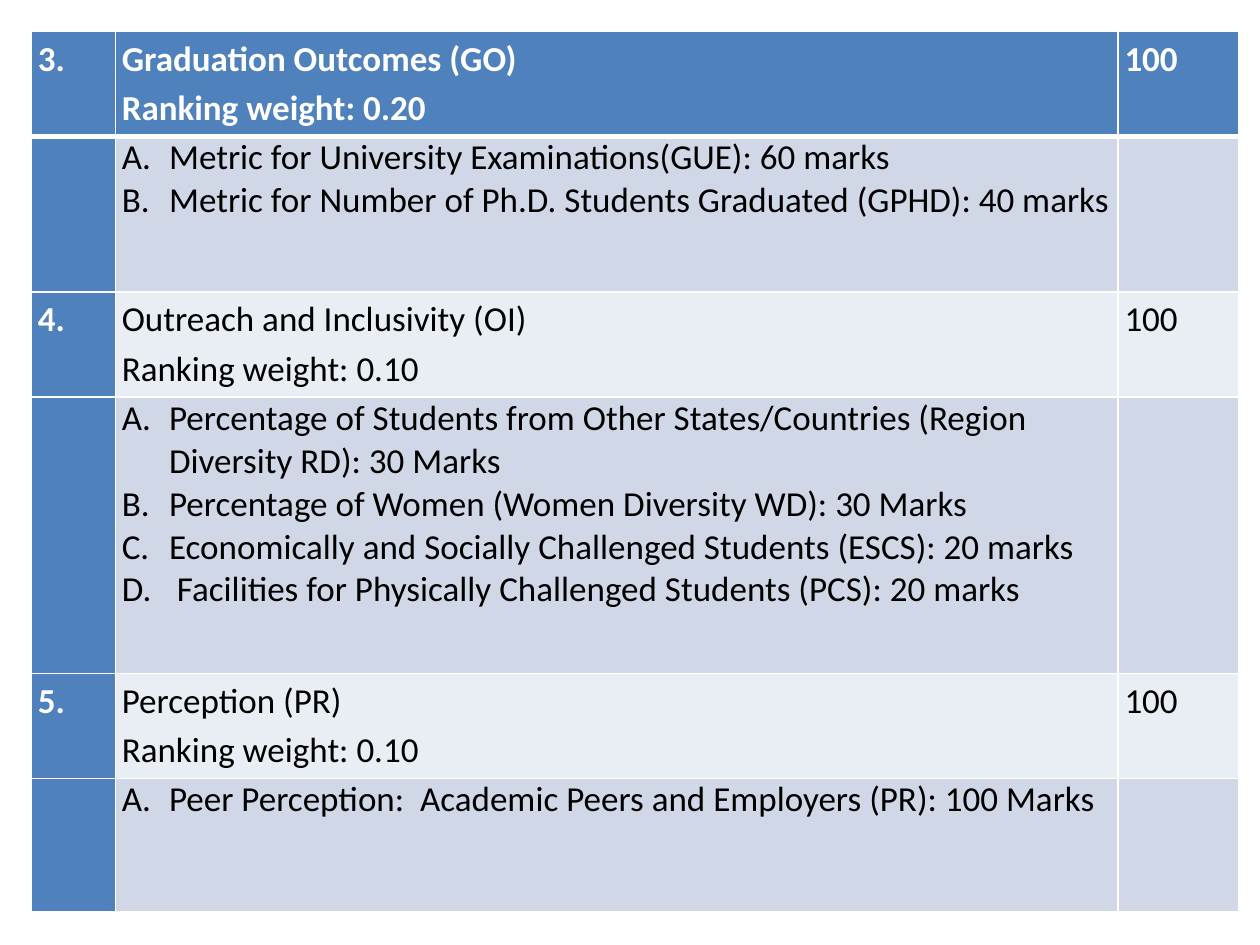
from lxml.etree import SubElement
from pptx import Presentation
from pptx.dml.color import RGBColor
from pptx.oxml.ns import qn
from pptx.util import Pt

COLORS = {
    "accent": "4F81BD",
    "detail": "D0D8E8",
    "heading": "E9EDF4",
    "light": "FFFFFF",
    "dark": "000000",
}
COLUMN_WIDTHS = (48, 573, 69)
HEADING_HEIGHT = 60

# Number, parameter, ranking weight, total marks, metrics, height of metrics row
PARAMETERS = [
    ("3.", "Graduation Outcomes (GO)", "0.20", "100", [
        "Metric for University Examinations(GUE): 60 marks",
        "Metric for Number of Ph.D. Students Graduated (GPHD): 40 marks",
    ], 89),
    ("4.", "Outreach and Inclusivity (OI)", "0.10", "100", [
        "Percentage of Students from Other States/Countries "
        "(Region Diversity RD): 30 Marks",
        "Percentage of Women (Women Diversity WD): 30 Marks",
        "Economically and Socially Challenged Students (ESCS): 20 marks",
        " Facilities for Physically Challenged Students (PCS): 20 marks",
    ], 158),
    ("5.", "Perception (PR)", "0.10", "100", [
        "Peer Perception:  Academic Peers and Employers (PR): 100 Marks",
    ], 76),
]


def write_text(paragraph, text, color="dark", bold=False, spacing=1.15,
               after=0, lettered=False):
    paragraph.line_spacing = spacing
    paragraph.space_after = Pt(after)
    if lettered:
        properties = paragraph._p.get_or_add_pPr()
        properties.set("marL", str(Pt(27)))
        properties.set("indent", str(-Pt(27)))
        SubElement(properties, qn("a:buAutoNum"), type="alphaUcPeriod")
    run = paragraph.add_run()
    run.text = text
    run.font.name = "Calibri"
    run.font.size = Pt(20)
    run.font.bold = bold
    run.font.color.rgb = RGBColor.from_string(COLORS[color])


def fill_cell(cell, fill, lines=(), top=1, bottom=1, **text_format):
    cell.margin_left = cell.margin_right = Pt(3.6)
    cell.margin_top = cell.margin_bottom = 0
    # Borders precede the fill in the cell properties
    properties = cell._tc.get_or_add_tcPr()
    for side, width in (("L", 1), ("R", 1), ("T", top), ("B", bottom)):
        border = SubElement(properties, qn(f"a:ln{side}"), w=str(Pt(width)))
        solid = SubElement(border, qn("a:solidFill"))
        SubElement(solid, qn("a:srgbClr"), val=COLORS["light"])
    cell.fill.solid()
    cell.fill.fore_color.rgb = RGBColor.from_string(COLORS[fill])
    frame = cell.text_frame
    for index, line in enumerate(lines):
        paragraph = frame.add_paragraph() if index else frame.paragraphs[0]
        write_text(paragraph, line, **text_format)


def add_ranking_table(slide, left, top, width, height):
    table = slide.shapes.add_table(
        2 * len(PARAMETERS), len(COLUMN_WIDTHS),
        Pt(left), Pt(top), Pt(width), Pt(height)).table
    table.first_row = table.horz_banding = False
    for column, column_width in zip(table.columns, COLUMN_WIDTHS):
        column.width = Pt(column_width)

    for index, (number, name, weight, marks, metrics, metrics_height) in enumerate(PARAMETERS):
        is_header = index == 0
        rule = 3 if is_header else 1
        row = 2 * index

        # Parameter heading
        table.rows[row].height = Pt(HEADING_HEIGHT)
        fill = "accent" if is_header else "heading"
        color = "light" if is_header else "dark"
        fill_cell(table.cell(row, 0), "accent", [number], bottom=rule,
                  color="light", bold=True, after=10)
        fill_cell(table.cell(row, 1), fill, [name, f"Ranking weight: {weight}"],
                  bottom=rule, color=color, bold=is_header)
        fill_cell(table.cell(row, 2), fill, [marks], bottom=rule,
                  color=color, bold=is_header, after=10)

        # Metrics
        table.rows[row + 1].height = Pt(metrics_height)
        fill_cell(table.cell(row + 1, 0), "accent", top=rule)
        fill_cell(table.cell(row + 1, 1), "detail", metrics, top=rule,
                  spacing=1.0, lettered=True)
        fill_cell(table.cell(row + 1, 2), "detail", top=rule)


def main():
    presentation = Presentation()
    presentation.slide_width = Pt(720)
    presentation.slide_height = Pt(540)
    slide = presentation.slides.add_slide(presentation.slide_layouts[6])
    table_height = sum(HEADING_HEIGHT + entry[-1] for entry in PARAMETERS)
    add_ranking_table(slide, 18, 18, sum(COLUMN_WIDTHS), table_height)
    presentation.save("out.pptx")


if __name__ == "__main__":
    main()
